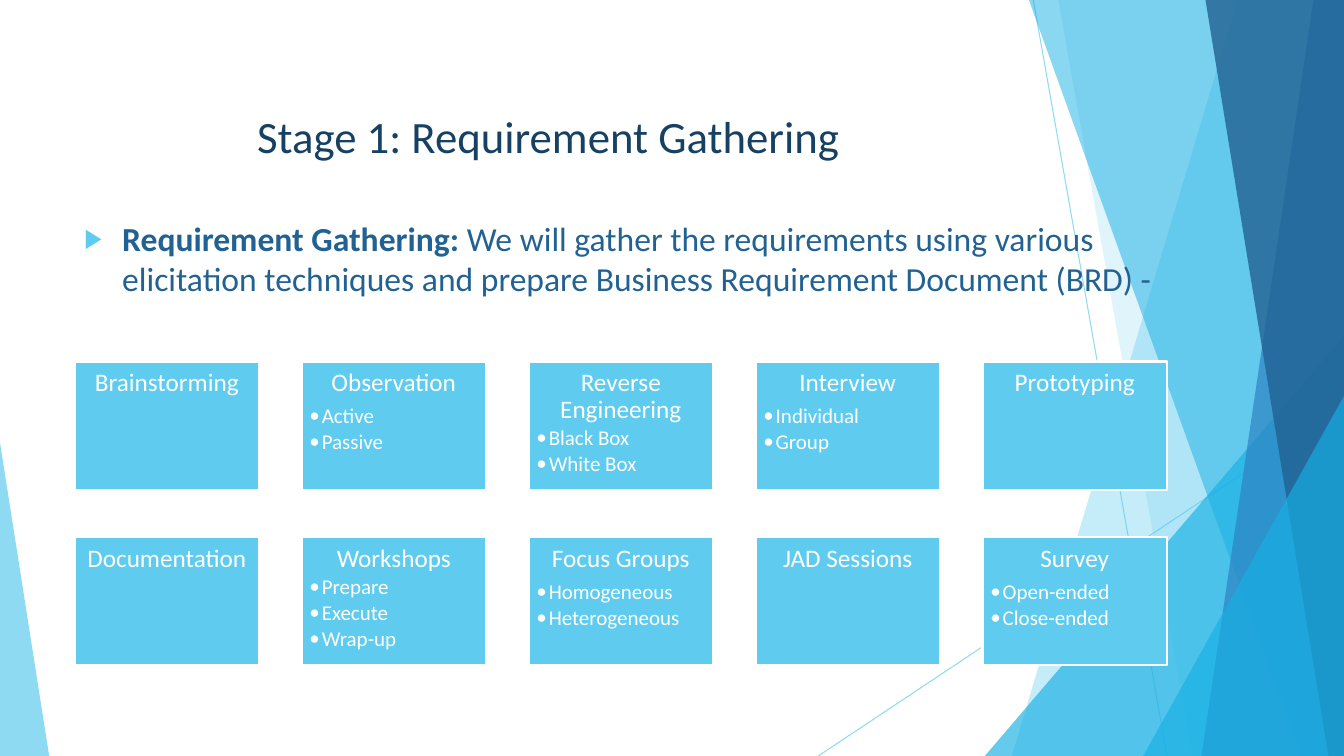
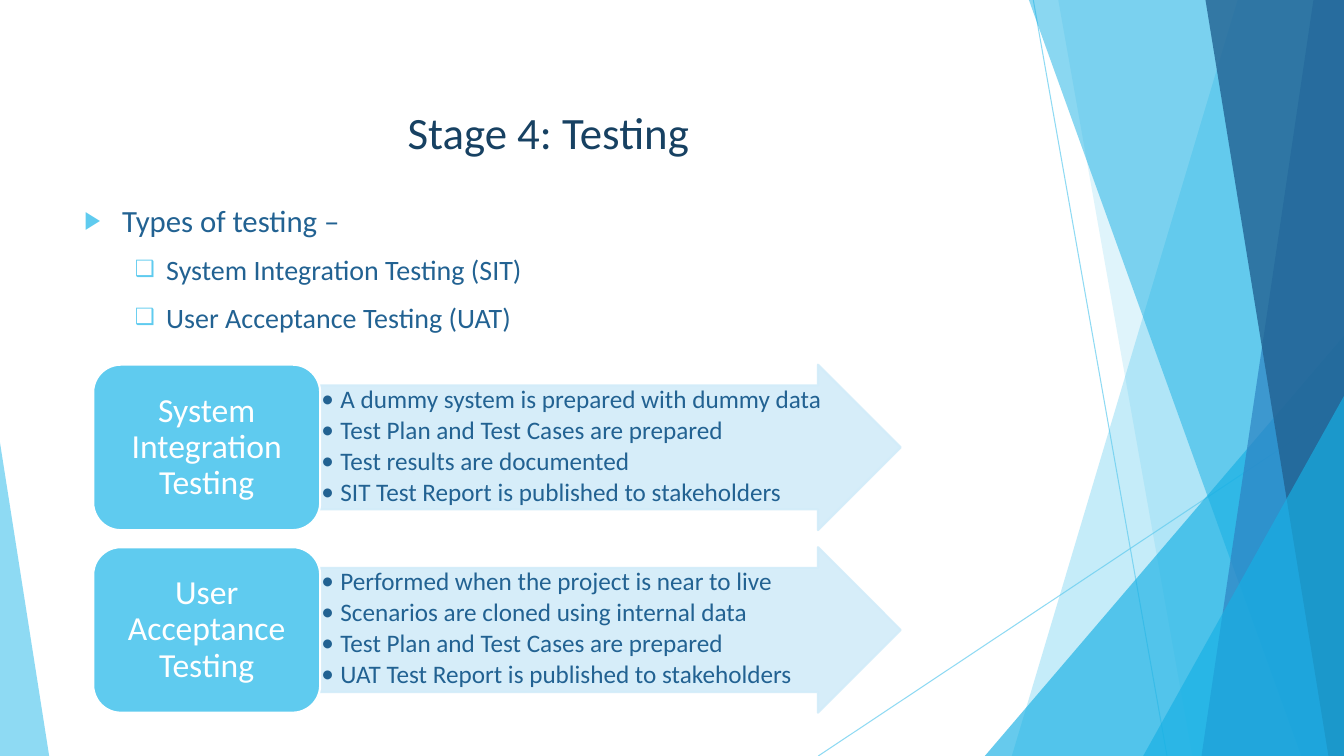
from dataclasses import dataclass, replace

from lxml.etree import SubElement
from pptx import Presentation
from pptx.dml.color import RGBColor
from pptx.enum.shapes import MSO_CONNECTOR, MSO_SHAPE
from pptx.enum.text import MSO_ANCHOR, PP_ALIGN
from pptx.oxml.ns import qn
from pptx.util import Cm, Pt

COLORS = {
    "sky": "5FCBEF",
    "azure": "17B0E4",
    "blue": "2E83C3",
    "body": "226292",
    "title": "174162",
    "pale": "D2ECF9",
    "white": "FFFFFF",
}
FONT = "Calibri"
WIDTH, HEIGHT = 33.87, 19.05


# Descriptions of the repeated elements; lengths are in centimetres
@dataclass(frozen=True)
class Ray:
    start: tuple[float, float]
    end: tuple[float, float]


@dataclass(frozen=True)
class Band:
    """Area from a slanted left edge to the right side of the slide."""
    top_x: float
    bottom_x: float
    color: str
    alpha: int


@dataclass(frozen=True)
class Wedge:
    """Triangle standing on the bottom of the slide."""
    left: float
    top: float
    width: float
    apex: float
    color: str
    alpha: int


@dataclass(frozen=True)
class Bullet:
    char: str
    margin: float
    hanging: float
    color: str = ""
    percent: int = 100


@dataclass(frozen=True)
class Para:
    text: str
    size: float
    color: str = "body"
    lead: str = ""
    bullet: Bullet | None = None
    centered: bool = False
    line: float = 1.0
    before: float = 0
    after: float = 0


@dataclass(frozen=True)
class Technique:
    name: str
    kinds: tuple[str, ...] = ()
    tight: bool = False


@dataclass(frozen=True)
class TestType:
    name: str
    points: tuple[str, ...]


DECORATION = (
    Ray((26.04, 0), (29.41, HEIGHT)),
    Ray((WIDTH, 10.24), (20.62, HEIGHT)),
    Band(31.19, 25.5, "sky", 36),
    Band(26.67, 30.05, "sky", 20),
    Wedge(24.82, 8.46, 9.05, 1, "azure", 66),
    Band(25.93, 32.79, "azure", 50),
    Band(33.1, 30.28, "blue", 70),
    Band(30.38, 33.48, "body", 80),
    Wedge(28.81, 9.98, 5.06, 1, "azure", 66),
    Wedge(0, 11.15, 1.24, 0, "sky", 70),
)

TOPIC = Bullet("▶", 0.95, 0.95, "sky", 80)
SUBTOPIC = Bullet("❑", 2.06, 0.79, "sky", 80)
CARD_DOT = Bullet("•", 0.31, 0.31)
ARROW_DOT = Bullet("•", 0.48, 0.48)

TECHNIQUES = (
    (
        Technique("Brainstorming"),
        Technique("Observation", ("Active", "Passive")),
        Technique("Reverse Engineering", ("Black Box", "White Box"), tight=True),
        Technique("Interview", ("Individual", "Group")),
        Technique("Prototyping"),
    ),
    (
        Technique("Documentation"),
        Technique("Workshops", ("Prepare", "Execute", "Wrap-up"), tight=True),
        Technique("Focus Groups", ("Homogeneous", "Heterogeneous")),
        Technique("JAD Sessions"),
        Technique("Survey", ("Open-ended", "Close-ended")),
    ),
)

TEST_TYPES = (
    TestType("System Integration Testing", (
        "A dummy system is prepared with dummy data",
        "Test Plan and Test Cases are prepared",
        "Test results are documented",
        "SIT Test Report is published to stakeholders",
    )),
    TestType("User Acceptance Testing", (
        "Performed when the project is near to live",
        "Scenarios are cloned using internal data",
        "Test Plan and Test Cases are prepared",
        "UAT Test Report is published to stakeholders",
    )),
)


# Formatting helpers
def rgb(name: str) -> RGBColor:
    return RGBColor.from_string(COLORS[name])


def set_alpha(shape, percent: int) -> None:
    for color in shape.element.spPr.iter(qn("a:srgbClr")):
        SubElement(color, qn("a:alpha")).set("val", str(percent * 1000))


def paint(shape, fill: str, outline: str = "") -> None:
    shape.shadow.inherit = False
    shape.fill.solid()
    shape.fill.fore_color.rgb = rgb(fill)
    if outline:
        shape.line.color.rgb = rgb(outline)
        shape.line.width = Pt(1.5)
    else:
        shape.line.fill.background()


def add_bullet(paragraph, bullet: Bullet) -> None:
    props = paragraph._p.get_or_add_pPr()
    props.set("marL", str(Cm(bullet.margin)))
    props.set("indent", str(-Cm(bullet.hanging)))
    if bullet.color:
        color = SubElement(props, qn("a:buClr"))
        SubElement(color, qn("a:srgbClr")).set("val", COLORS[bullet.color])
    SubElement(props, qn("a:buSzPct")).set("val", str(bullet.percent * 1000))
    SubElement(props, qn("a:buFont")).set("typeface", FONT)
    SubElement(props, qn("a:buChar")).set("char", bullet.char)


def write(frame, paras: list[Para], inset: tuple[float, float] = (0.25, 0.13),
          anchor: MSO_ANCHOR = MSO_ANCHOR.TOP) -> None:
    frame.word_wrap = True
    frame.vertical_anchor = anchor
    frame.margin_left = frame.margin_right = Cm(inset[0])
    frame.margin_top = frame.margin_bottom = Cm(inset[1])
    for index, para in enumerate(paras):
        paragraph = frame.add_paragraph() if index else frame.paragraphs[0]
        paragraph.text = para.lead or para.text
        if para.lead:
            paragraph.add_run().text = para.text
        if para.bullet:
            add_bullet(paragraph, para.bullet)
        paragraph.alignment = PP_ALIGN.CENTER if para.centered else PP_ALIGN.LEFT
        paragraph.line_spacing = para.line
        paragraph.space_before = Pt(para.before if index else 0)
        paragraph.space_after = Pt(para.after)
        for run in paragraph.runs:
            run.font.name = FONT
            run.font.size = Pt(para.size)
            run.font.color.rgb = rgb(para.color)
        if para.lead:
            paragraph.runs[0].font.bold = True


def add_text(slide, left: float, top: float, width: float, height: float,
             paras: list[Para]) -> None:
    box = slide.shapes.add_textbox(Cm(left), Cm(top), Cm(width), Cm(height))
    write(box.text_frame, paras)


def add_block(slide, preset: MSO_SHAPE, left: float, top: float, width: float,
              height: float):
    return slide.shapes.add_shape(preset, Cm(left), Cm(top), Cm(width), Cm(height))


# Background and title, shared by the slides
def draw_ray(slide, ray: Ray) -> None:
    line = slide.shapes.add_connector(
        MSO_CONNECTOR.STRAIGHT, *(Cm(value) for value in ray.start + ray.end))
    line.line.color.rgb = rgb("sky")
    line.line.width = Pt(0.75)
    set_alpha(line, 70)
    SubElement(line.element.spPr, qn("a:effectLst"))


def draw_band(slide, band: Band) -> None:
    outline = slide.shapes.build_freeform(Cm(band.top_x), 0)
    corners = ((WIDTH, 0), (WIDTH, HEIGHT), (band.bottom_x, HEIGHT))
    outline.add_line_segments([(Cm(x), Cm(y)) for x, y in corners], close=True)
    area = outline.convert_to_shape()
    paint(area, band.color)
    set_alpha(area, band.alpha)


def draw_wedge(slide, wedge: Wedge) -> None:
    triangle = add_block(slide, MSO_SHAPE.ISOSCELES_TRIANGLE, wedge.left, wedge.top,
                         wedge.width, HEIGHT - wedge.top)
    triangle.adjustments[0] = wedge.apex
    paint(triangle, wedge.color)
    set_alpha(triangle, wedge.alpha)


DRAW = {Ray: draw_ray, Band: draw_band, Wedge: draw_wedge}


def start_slide(deck, title: str, top: float, height: float):
    slide = deck.slides.add_slide(deck.slide_layouts[6])
    for part in DECORATION:
        DRAW[type(part)](slide, part)
    add_text(slide, 1.88, top, 23.88, height,
             [Para(title, 32, "title", centered=True)])
    return slide


# Slide contents
def draw_technique(slide, technique: Technique, left: float, top: float) -> None:
    card = add_block(slide, MSO_SHAPE.RECTANGLE, left, top, 4.65, 3.23)
    paint(card, "sky", "white")
    heading = Para(technique.name, 18, "white", centered=True, line=0.9,
                   after=2.7 if technique.tight else 6.3)
    kinds = [Para(kind, 15, "white", bullet=CARD_DOT, line=0.9, after=2.25)
             for kind in technique.kinds]
    write(card.text_frame, [heading, *kinds], (0.2, 0.2))


def draw_test_type(slide, test: TestType, top: float) -> None:
    left, name_width, height = 2.35, 5.72, 4.17
    arrow = add_block(slide, MSO_SHAPE.RIGHT_ARROW, left + name_width, top, 14.63, height)
    arrow.adjustments[0] = 0.75
    arrow.adjustments[1] = 0.5
    paint(arrow, "pale", "pale")
    set_alpha(arrow, 90)
    write(arrow.text_frame,
          [Para(point, 18, bullet=ARROW_DOT, line=0.9, after=2.7)
           for point in test.points], (0.03, 0.03))
    label = add_block(slide, MSO_SHAPE.ROUNDED_RECTANGLE, left, top, name_width, height)
    paint(label, "sky", "white")
    write(label.text_frame,
          [Para(test.name, 24, "white", centered=True, line=0.9)],
          anchor=MSO_ANCHOR.MIDDLE)


def build_gathering(deck) -> None:
    slide = start_slide(deck, "Stage 1: Requirement Gathering", 2.62, 2.74)
    add_text(slide, 1.88, 5.36, 27.53, 11.43, [Para(
        "We will gather the requirements using various elicitation techniques "
        "and prepare Business Requirement Document (BRD) -",
        24, lead="Requirement Gathering: ", bullet=TOPIC)])
    for row, techniques in enumerate(TECHNIQUES):
        for column, technique in enumerate(techniques):
            draw_technique(slide, technique, 1.88 + 5.72 * column, 9.11 + 4.43 * row)


def build_testing(deck) -> None:
    slide = start_slide(deck, "Stage 4: Testing", 2.51, 2.44)
    subtopic = Para("System Integration Testing (SIT)", 20, bullet=SUBTOPIC, before=10)
    add_text(slide, 1.88, 4.95, 24.74, 10.77, [
        Para("Types of testing –", 22, bullet=TOPIC),
        subtopic,
        replace(subtopic, text="User Acceptance Testing (UAT)"),
    ])
    for index, test in enumerate(TEST_TYPES):
        draw_test_type(slide, test, 9.19 + 4.6 * index)


def main() -> None:
    deck = Presentation()
    deck.slide_width, deck.slide_height = Cm(WIDTH), Cm(HEIGHT)
    build_gathering(deck)
    build_testing(deck)
    deck.save("out.pptx")


if __name__ == "__main__":
    main()
